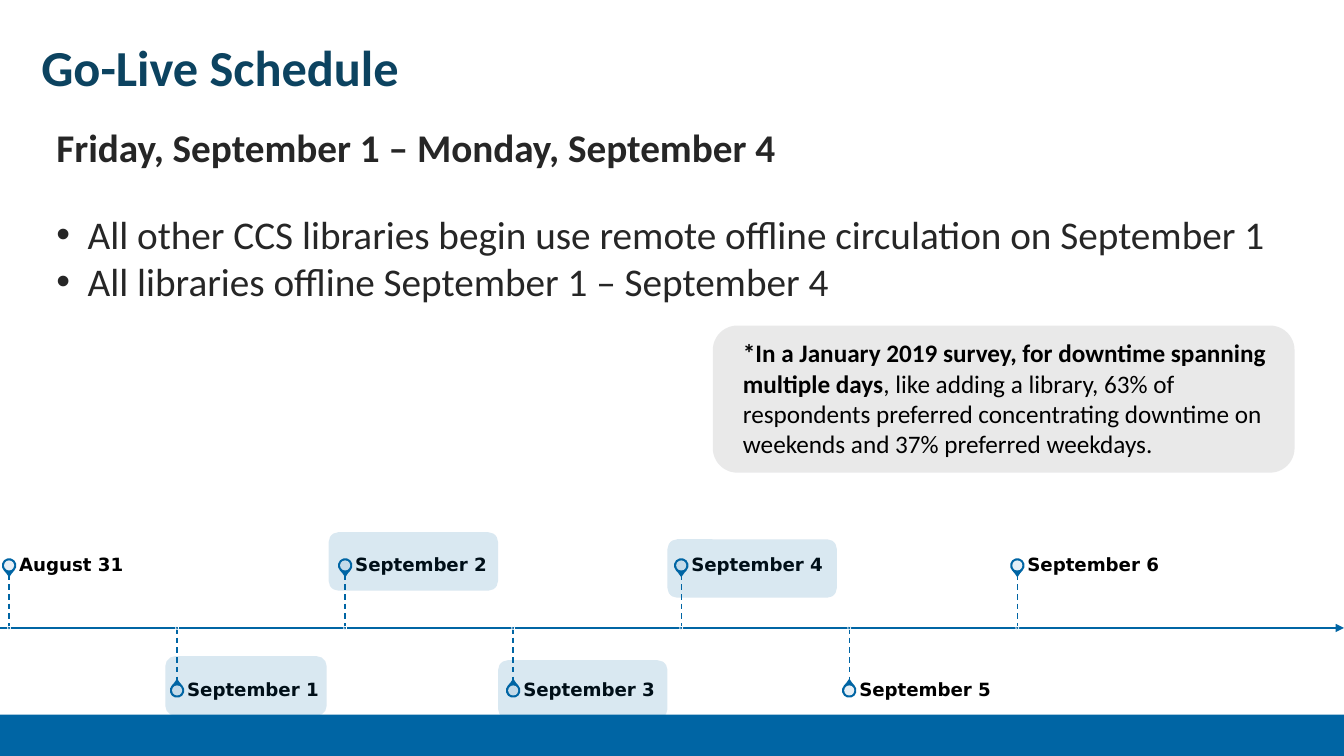
from lxml.etree import SubElement
from pptx import Presentation
from pptx.dml.color import RGBColor
from pptx.enum.dml import MSO_LINE
from pptx.enum.shapes import MSO_CONNECTOR, MSO_SHAPE
from pptx.enum.text import MSO_ANCHOR, MSO_AUTO_SIZE, PP_ALIGN
from pptx.oxml.ns import qn
from pptx.util import Inches, Pt

COLOURS = {
    "blue": "0065A4",
    "navy": "0C4360",
    "body": "262626",
    "grey": "6D6E71",
    "black": "000000",
    "white": "FFFFFF",
}


class SlideBuilder:
    font = "Calibri"
    label_font = "DejaVu Sans"

    def __init__(self, page):
        self.page = page

    def colour(self, name):
        return RGBColor.from_string(COLOURS[name])

    def style(self, span, size, colour, bold=False, font=None):
        span.font.name = font or self.font
        span.font.size = Pt(size)
        span.font.bold = bold
        span.font.color.rgb = self.colour(colour)

    def place(self, box, left, top, width, height):
        box.left, box.top = Inches(left), Inches(top)
        box.width, box.height = Inches(width), Inches(height)
        frame = box.text_frame
        frame.word_wrap = True
        frame.auto_size = MSO_AUTO_SIZE.NONE
        frame.vertical_anchor = MSO_ANCHOR.TOP
        return frame

    def title(self, text, *bounds):
        frame = self.place(self.page.shapes.title, *bounds)
        frame.text = text
        para = frame.paragraphs[0]
        para.alignment = PP_ALIGN.LEFT
        self.style(para.runs[0], 36, "navy", True)

    def body(self, heading, items, *bounds):
        frame = self.place(self.page.placeholders[1], *bounds)
        frame.text = "\n".join([heading, *items])
        for index, para in enumerate(frame.paragraphs):
            properties = para._p.get_or_add_pPr()
            indent = Inches(0.31) if index else 0
            properties.set("marL", str(indent))
            properties.set("indent", str(-indent))
            if index:
                SubElement(properties, qn("a:buFont"), typeface="Arial")
                SubElement(properties, qn("a:buChar"), char="•")
            else:
                SubElement(properties, qn("a:buNone"))
            para.space_before = Pt(29 if index == 1 else 0)
            self.style(para.runs[0], 28, "body", index == 0)

    def shape(self, kind, left, top, width, height, fill, opacity=100,
              line=None, weight=1, rotation=0):
        shape = self.page.shapes.add_shape(
            kind, Inches(left), Inches(top), Inches(width), Inches(height))
        shape.shadow.inherit = False
        shape.rotation = rotation
        shape.fill.solid()
        shape.fill.fore_color.rgb = self.colour(fill)
        if opacity < 100:
            tint = shape.fill._xPr.find(qn("a:solidFill"))[0]
            SubElement(tint, qn("a:alpha"), val=str(opacity * 1000))
        if line:
            shape.line.color.rgb = self.colour(line)
            shape.line.width = Pt(weight)
        else:
            shape.line.fill.background()
        return shape

    def line(self, x1, y1, x2, y2, weight, dashed=False, arrow=False):
        line = self.page.shapes.add_connector(
            MSO_CONNECTOR.STRAIGHT, Inches(x1), Inches(y1), Inches(x2), Inches(y2))
        line.line.color.rgb = self.colour("blue")
        line.line.width = Pt(weight)
        if dashed:
            line.line.dash_style = MSO_LINE.DASH
        if arrow:
            SubElement(line.line._get_or_add_ln(), qn("a:tailEnd"), type="triangle")
        SubElement(line._element.spPr, qn("a:effectLst"))

    def text(self, parts, left, top, width, height, size, font=None, label=False):
        box = self.page.shapes.add_textbox(0, 0, 0, 0)
        frame = self.place(box, left, top, width, height)
        para = frame.paragraphs[0]
        if label:
            frame.margin_left = frame.margin_top = frame.margin_bottom = 0
            frame.vertical_anchor = MSO_ANCHOR.MIDDLE
            para.line_spacing = 0.9
        for words, bold in parts:
            span = para.add_run()
            span.text = words
            self.style(span, size, "black", bold, font)

    def milestone(self, label, x, axis, above):
        side = -1 if above else 1
        centre = axis + side * 0.62
        pin = self.shape(MSO_SHAPE.TEAR, x - 0.065, centre - 0.065, 0.13, 0.13,
                         "blue", line="blue", rotation=135 if above else 315)
        pin.adjustments[0] = 1.15
        self.shape(MSO_SHAPE.OVAL, x - 0.05, centre - 0.05, 0.1, 0.1, "white", 90)
        self.text([(label, True)], x + 0.1, centre - 0.095, 2.77, 0.19, 13,
                  self.label_font, True)
        self.line(x, min(axis, axis + side * 0.53), x, max(axis, axis + side * 0.53),
                  1, dashed=True)
        self.shape(MSO_SHAPE.OVAL, x - 0.015, axis - 0.015, 0.03, 0.03, "blue",
                   line="white", weight=0.5)


def main():
    deck = Presentation()
    deck.slide_width, deck.slide_height = Inches(13.33), Inches(7.5)
    slide = SlideBuilder(deck.slides.add_slide(deck.slide_layouts[1]))

    slide.shape(MSO_SHAPE.RECTANGLE, 0, 7.09, 13.33, 0.41, "blue")
    slide.title("Go-Live Schedule", 0.31, 0.31, 7.77, 1.01)
    slide.body(
        "Friday, September 1 – Monday, September 4",
        ["All other CCS libraries begin use remote offline circulation on September 1",
         "All libraries offline September 1 – September 4"],
        0.46, 1.17, 12.38, 2.22)

    axis = 6.23
    slide.line(0, axis, 13.33, axis, 1.5, arrow=True)
    days = ["August 31"] + [f"September {day}" for day in range(1, 7)]
    for index, day in enumerate(days):
        slide.milestone(day, 0.09 + index * 5 / 3, axis, index % 2 == 0)

    offline_days = [(1.64, 6.51, 1.6, 0.59), (3.26, 5.28, 1.68, 0.58),
                    (4.94, 6.55, 1.68, 0.58), (6.62, 5.35, 1.68, 0.58)]
    for bounds in offline_days:
        slide.shape(MSO_SHAPE.ROUNDED_RECTANGLE, *bounds, "blue", 15)

    slide.shape(MSO_SHAPE.ROUNDED_RECTANGLE, 7.07, 3.23, 5.77, 1.46, "grey", 15)
    slide.text(
        [("*In a January 2019 survey, for downtime spanning multiple days", True),
         (", like adding a library, 63% of respondents preferred concentrating "
          "downtime on weekends and 37% preferred weekdays.", False)],
        7.27, 3.3, 5.62, 1.33, 18)
    deck.save("out.pptx")


if __name__ == "__main__":
    main()
